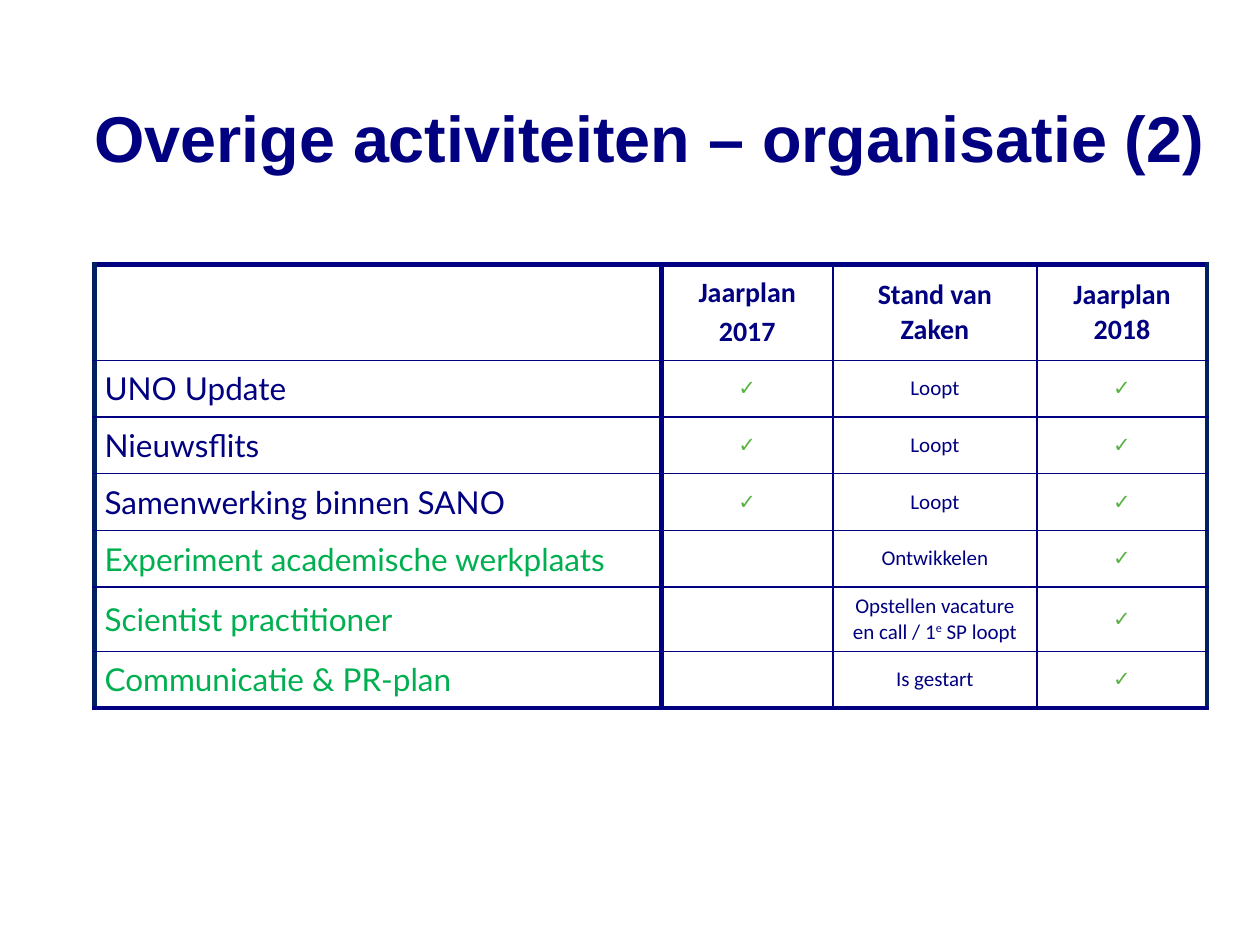
from lxml.etree import SubElement
from pptx import Presentation
from pptx.dml.color import RGBColor
from pptx.enum.text import MSO_ANCHOR as Anchor, PP_ALIGN as Align
from pptx.oxml.ns import qn
from pptx.util import Inches, Pt

NAVY = RGBColor(0x00, 0x00, 0x80)
DARK_BLUE = RGBColor(0x00, 0x20, 0x60)
GREEN = RGBColor(0x00, 0xB0, 0x50)
CHECK_GREEN = RGBColor(0x5B, 0xB2, 0x44)
WHITE = RGBColor(0xFF, 0xFF, 0xFF)

TITLE = dict(name="Arial", size=Pt(37), bold=True)
HEADER = dict(name="Calibri", size=Pt(16), bold=True)
ACTIVITY = dict(name="Lato", size=Pt(18), bold=False)
STATUS = dict(name="Calibri", size=Pt(12), bold=False)
CHECK = dict(name="Calibri", size=Pt(12), bold=True)

THICK, THIN = Pt(3), Pt(1)
COLUMN_WIDTHS = [4.5, 1.36, 1.62, 1.35]
HEADER_HEIGHT, ROW_HEIGHT, TALL_ROW_HEIGHT = 0.76, 0.45, 0.51

HEADINGS = ["", "Jaarplan\n2017", "Stand van Zaken", "Jaarplan 2018"]
# activity, in the 2017 plan, status as (text, superscript, text)
ACTIVITIES = [
    ("UNO Update", True, ("Loopt",)),
    ("Nieuwsflits", True, ("Loopt",)),
    ("Samenwerking binnen SANO", True, ("Loopt",)),
    ("Experiment academische werkplaats", False, ("Ontwikkelen",)),
    ("Scientist practitioner", False,
     ("Opstellen vacature en call / 1", "e", " SP loopt")),
    ("Communicatie & PR-plan", False, ("Is gestart",)),
]


def set_font(font, style, color):
    for attribute, value in style.items():
        setattr(font, attribute, value)
    font.color.rgb = color


def add_title(slide, left, top, width, height):
    frame = slide.shapes.add_textbox(left, top, width, height).text_frame
    layout = dict(word_wrap=True, vertical_anchor=Anchor.MIDDLE, margin_left=0,
                  margin_right=0, margin_top=0, margin_bottom=0)
    for attribute, value in layout.items():
        setattr(frame, attribute, value)
    heading = frame.paragraphs[0]
    heading.text = "Overige activiteiten – organisatie (2)"
    set_font(heading.font, TITLE, NAVY)


def write_cell(cell, pieces, style, color, align=Align.CENTER):
    """Write the pieces in one cell; every second piece is superscript."""
    layout = dict(vertical_anchor=Anchor.MIDDLE,
                  margin_left=Inches(0.08), margin_right=Inches(0.08),
                  margin_top=Inches(0.05), margin_bottom=Inches(0.05))
    for attribute, value in layout.items():
        setattr(cell, attribute, value)
    frame = cell.text_frame
    if len(pieces) == 1:
        frame.text = pieces[0]
    else:
        for index, piece in enumerate(pieces):
            run = frame.paragraphs[0].add_run()
            run.text = piece
            if index % 2:
                run.font._element.set("baseline", "30000")
    for index, paragraph in enumerate(frame.paragraphs):
        paragraph.alignment = align
        if index:
            paragraph.space_before = Pt(3.2)
        set_font(paragraph.font, style, color)
        for run in paragraph.runs:
            set_font(run.font, style, color)


def set_borders(cell, borders):
    properties = cell._tc.get_or_add_tcPr()
    for side, (color, width) in borders.items():
        line = SubElement(properties, qn(f"a:ln{side}"), w=str(width))
        fill = SubElement(line, qn("a:solidFill"))
        SubElement(fill, qn("a:srgbClr"), val=str(color))


def rule_table(table):
    """Thick frame and thick rule after the first column, thin rules elsewhere."""
    last_row, last_column = len(table.rows) - 1, len(table.columns) - 1
    for row_index, row in enumerate(table.rows):
        for column, cell in enumerate(row.cells):
            set_borders(cell, {
                "L": (NAVY if column else DARK_BLUE, THICK if column < 2 else THIN),
                "R": (DARK_BLUE if column == last_column else NAVY,
                      THICK if column in (0, last_column) else THIN),
                "T": (NAVY, THIN if row_index else THICK),
                "B": (NAVY, THICK if row_index == last_row else THIN),
            })
            cell.fill.solid()
            cell.fill.fore_color.rgb = WHITE


def add_activity_table(slide, left, top, width, height):
    table = slide.shapes.add_table(len(ACTIVITIES) + 1, len(HEADINGS),
                                   left, top, width, height).table
    table.first_row = table.horz_banding = False
    for column, column_width in zip(table.columns, COLUMN_WIDTHS):
        column.width = Inches(column_width)

    table.rows[0].height = Inches(HEADER_HEIGHT)
    for column, heading in enumerate(HEADINGS):
        write_cell(table.cell(0, column), (heading,), HEADER, NAVY)

    for row, (activity, planned, status) in enumerate(ACTIVITIES, 1):
        tall = len(status) > 1
        table.rows[row].height = Inches(TALL_ROW_HEIGHT if tall else ROW_HEIGHT)
        write_cell(table.cell(row, 0), (activity,), ACTIVITY,
                   NAVY if planned else GREEN, Align.LEFT)
        write_cell(table.cell(row, 1), ("✓" if planned else "",), CHECK, CHECK_GREEN)
        write_cell(table.cell(row, 2), status, STATUS, NAVY)
        write_cell(table.cell(row, 3), ("✓",), CHECK, CHECK_GREEN)
    rule_table(table)


def main():
    prs = Presentation()
    prs.slide_width, prs.slide_height = Inches(10), Inches(7.5)
    slide = prs.slides.add_slide(prs.slide_layouts[6])
    add_title(slide, Inches(0.75), Inches(0.52), Inches(9.37), Inches(1.13))
    add_activity_table(slide, Inches(0.75), Inches(2.1), Inches(8.83), Inches(3.52))
    prs.save("out.pptx")


if __name__ == "__main__":
    main()
